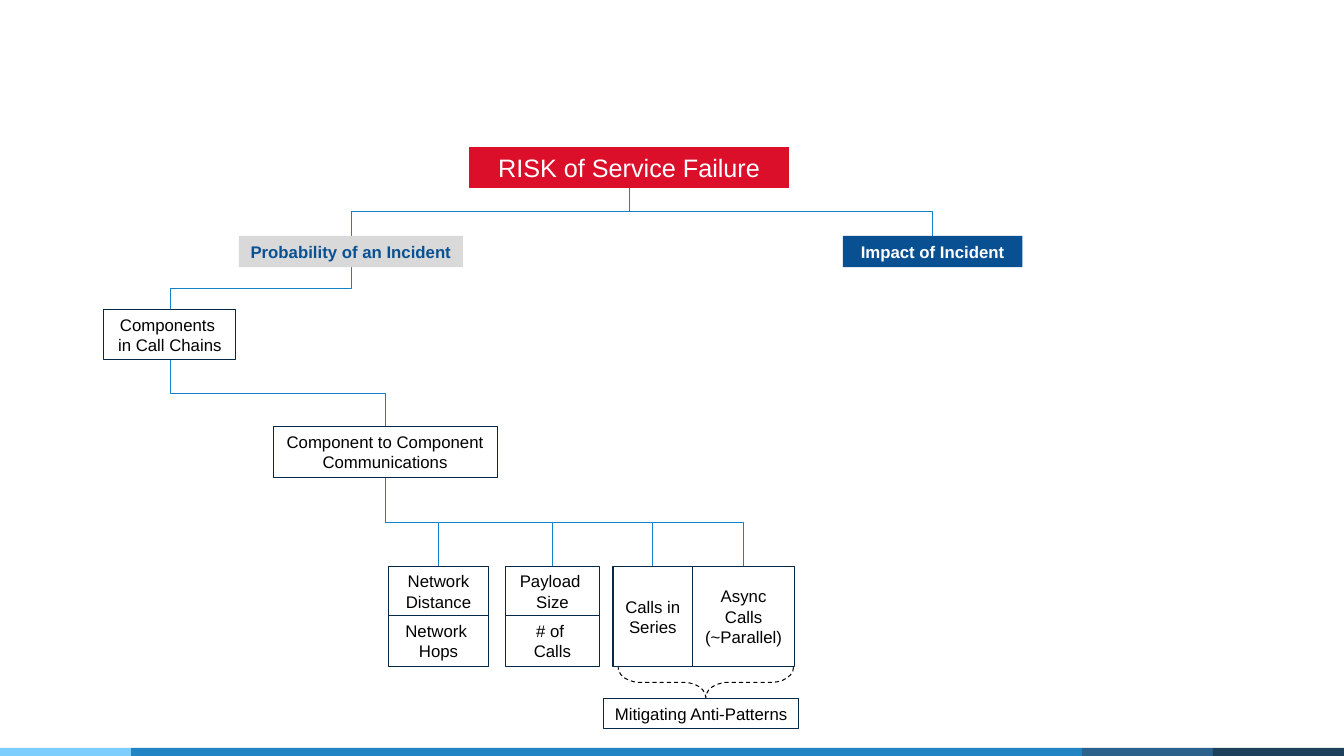
from dataclasses import dataclass
from typing import Optional

import lxml.etree
import pptx
import pptx.dml.color
import pptx.enum.dml
import pptx.enum.shapes
import pptx.enum.text
import pptx.oxml.ns
import pptx.util

SCALE = 9144
SHAPE = pptx.enum.shapes.MSO_SHAPE
qn = pptx.oxml.ns.qn


@dataclass(frozen=True)
class Theme:
    font: str = "Arial"
    title_size: int = 18
    body_size: int = 12
    box_line: float = 0.75
    link_line: float = 0.5
    white: str = "FFFFFF"
    black: str = "000000"
    navy: str = "042849"
    red: str = "DB0F29"
    grey: str = "D9D9D9"
    blue: str = "095092"
    blue_text: str = "0A5193"
    link: str = "1581C9"
    footer: tuple[str, ...] = ("7ECEFD", "2185C5", "2C618B", "1D405D")


THEME = Theme()


@dataclass(frozen=True)
class Node:
    text: str
    left: int
    top: int
    width: int
    height: int
    fill: Optional[str] = None
    outline: Optional[str] = THEME.navy
    color: str = THEME.black
    size: int = THEME.body_size
    bold: bool = False
    wrap: bool = True


NODES: dict[str, Node] = {
    "risk": Node("RISK of Service Failure", 466, 146, 316, 40, fill=THEME.red,
                 outline=THEME.red, color=THEME.white, size=THEME.title_size),
    "probability": Node("Probability of an Incident", 237, 234, 222, 31, fill=THEME.grey,
                        outline=None, color=THEME.blue_text, bold=True, wrap=False),
    "impact": Node("Impact of Incident", 836, 234, 178, 31, fill=THEME.blue,
                   outline=None, color=THEME.white, bold=True),
    "chains": Node("Components \nin Call Chains", 103, 307, 131, 50),
    "communications": Node("Component to Component Communications", 271, 423, 222, 51),
    "distance": Node("Network Distance", 385, 562, 100, 49),
    "hops": Node("Network \nHops", 385, 611, 100, 50),
    "payload": Node("Payload \nSize", 501, 562, 94, 49),
    "calls": Node("# of \nCalls", 501, 611, 94, 50),
    "series": Node("Calls in Series", 608, 562, 79, 99),
    "async": Node("Async Calls (~Parallel)", 687, 562, 101, 99),
    "mitigating": Node("Mitigating Anti-Patterns", 599, 693, 193, 30,
                       fill=THEME.white, wrap=False),
}

LINKS: dict[str, tuple[str, ...]] = {
    "risk": ("probability", "impact"),
    "probability": ("chains",),
    "chains": ("communications",),
    "communications": ("distance", "payload", "series", "async"),
}

FOOTER_EDGES = (0, 130, 1073, 1203, 1333)


def rgb(value: str) -> pptx.dml.color.RGBColor:
    return pptx.dml.color.RGBColor.from_string(value)


def add_shape(page, kind, left: int, top: int, width: int, height: int,
              fill: Optional[str] = None, outline: Optional[str] = None):
    shape = page.shapes.add_shape(kind, *(n * SCALE for n in (left, top, width, height)))
    shape.shadow.inherit = False
    if fill:
        shape.fill.solid()
        shape.fill.fore_color.rgb = rgb(fill)
    else:
        shape.fill.background()
    if outline:
        shape.line.color.rgb = rgb(outline)
        shape.line.width = pptx.util.Pt(THEME.box_line)
    else:
        shape.line.fill.background()
    return shape


def write_text(box, text: str, *, size: int, color: str, bold: bool, wrap: bool) -> None:
    frame = box.text_frame
    frame.word_wrap = wrap
    frame.vertical_anchor = pptx.enum.text.MSO_ANCHOR.MIDDLE
    para = frame.paragraphs[0]
    para.alignment = pptx.enum.text.PP_ALIGN.CENTER
    para.text = text
    for span in para.runs:
        span.font.name = THEME.font
        span.font.size = pptx.util.Pt(size)
        span.font.bold = bold
        span.font.color.rgb = rgb(color)
    for line_break in para._p.findall(qn("a:br")):
        lxml.etree.SubElement(line_break, qn("a:rPr"), sz=str(size * 100))


def add_node(page, node: Node) -> None:
    box = add_shape(page, SHAPE.RECTANGLE, node.left, node.top, node.width, node.height,
                    fill=node.fill, outline=node.outline)
    write_text(box, node.text, size=node.size, color=node.color,
               bold=node.bold, wrap=node.wrap)


def add_link(page, parent: Node, child: Node) -> None:
    start = (parent.left + parent.width / 2) * SCALE
    end = (child.left + child.width / 2) * SCALE
    upper = (parent.top + parent.height) * SCALE
    lower = child.top * SCALE
    drop, span = lower - upper, abs(end - start)
    left = int((start + end - drop) / 2)
    top = int((upper + lower - span) / 2)
    right, bottom = left + drop, top + int(span)
    rightward = end > start
    begin_x, end_x = (right, left) if rightward else (left, right)
    link = page.shapes.add_connector(pptx.enum.shapes.MSO_CONNECTOR.ELBOW,
                                     begin_x, top, end_x, bottom)
    link.line.color.rgb = rgb(THEME.link)
    link.line.width = pptx.util.Pt(THEME.link_line)
    properties = link._element.spPr
    properties.find(qn("a:xfrm")).set("rot", str((270 if rightward else 90) * 60000))
    lxml.etree.SubElement(properties, qn("a:effectLst"))


def add_brace(page) -> None:
    brace = add_shape(page, SHAPE.RIGHT_BRACE, 685, 590, 30, 174, outline=THEME.black)
    brace.rotation = 90
    brace.adjustments[0] = 0.73
    brace.adjustments[1] = 0.5
    brace.line.dash_style = pptx.enum.dml.MSO_LINE.DASH


def main() -> None:
    deck = pptx.Presentation()
    deck.slide_width = 1333 * SCALE
    deck.slide_height = 750 * SCALE
    page = deck.slides.add_slide(deck.slide_layouts[6])
    for left, right, color in zip(FOOTER_EDGES, FOOTER_EDGES[1:], THEME.footer):
        add_shape(page, SHAPE.RECTANGLE, left, 742, right - left, 8, fill=color)
    for parent, children in LINKS.items():
        for child in children:
            add_link(page, NODES[parent], NODES[child])
    for node in NODES.values():
        add_node(page, node)
    add_brace(page)
    deck.save("out.pptx")


if __name__ == "__main__":
    main()
